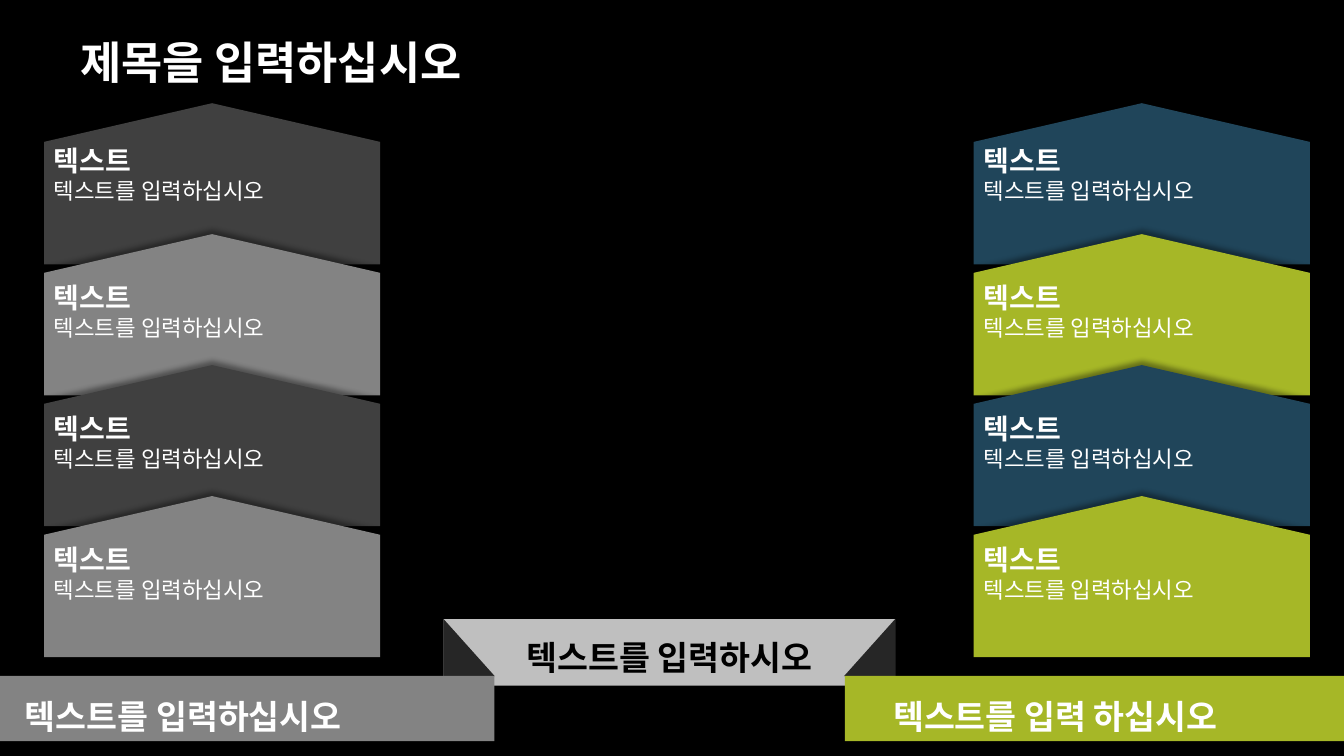
from lxml import etree
from pptx import Presentation
from pptx.dml.color import RGBColor
from pptx.enum.shapes import MSO_SHAPE
from pptx.enum.text import MSO_ANCHOR, MSO_AUTO_SIZE, PP_ALIGN
from pptx.oxml.ns import qn
from pptx.util import Cm, Pt

RECTANGLE = MSO_SHAPE.RECTANGLE
TRIANGLE = MSO_SHAPE.ISOSCELES_TRIANGLE
PENTAGON = MSO_SHAPE.PENTAGON
LEFT, CENTER = PP_ALIGN.LEFT, PP_ALIGN.CENTER
MIDDLE = MSO_ANCHOR.MIDDLE
GROW = MSO_AUTO_SIZE.SHAPE_TO_FIT_TEXT

FONT = "Calibri"
BLACK, WHITE, DARK = "000000", "FFFFFF", "262626"
CHARCOAL, GRAY, SILVER = "404040", "838383", "BFBFBF"
NAVY, LIME = "20455A", "A6B727"
STEP_PITCH, STEP_HEIGHT = 3.3, 4.06


def color(hex_string):
    """Turn a hex string into a colour."""
    return RGBColor.from_string(hex_string)


def add_block(slide, kind, box, fill):
    """Add a flat filled shape without an outline."""
    block = slide.shapes.add_shape(kind, *map(Cm, box))
    block.shadow.inherit = False
    block.fill.solid()
    block.fill.fore_color.rgb = color(fill)
    block.line.fill.background()
    return block


def add_text(slide, box, lines, ink=WHITE, spacing=None, align=LEFT, wrap=True):
    """Add a text box with one paragraph per (wording, size, bold) line."""
    frame = slide.shapes.add_textbox(*map(Cm, box)).text_frame
    frame.word_wrap = wrap
    frame.auto_size = GROW
    for index, (wording, size, bold) in enumerate(lines):
        paragraph = frame.add_paragraph() if index else frame.paragraphs[0]
        paragraph.alignment = align
        paragraph.line_spacing = spacing
        run = paragraph.add_run()
        run.text = wording
        run.font.name = FONT
        run.font.size = Pt(size)
        run.font.bold = bold
        run.font.color.rgb = color(ink)
    return frame


def cast_shadow_up(block):
    """Give a shape a soft black shadow above it."""
    effects = block._element.spPr.find(qn("a:effectLst"))
    shadow = etree.SubElement(
        effects, qn("a:outerShdw"), blurRad=str(Pt(4)), dist=str(Pt(3)),
        dir="16200000", algn="b", rotWithShape="0")
    ink = etree.SubElement(shadow, qn("a:srgbClr"), val=BLACK)
    etree.SubElement(ink, qn("a:alpha"), val="40000")


def add_step(slide, left, top, width, text_offset, fill):
    """Add one upward arrow step with its heading and detail."""
    turn = (width - STEP_HEIGHT) / 2
    arrow = add_block(
        slide, PENTAGON, (left + turn, top - turn, STEP_HEIGHT, width), fill)
    arrow.rotation = 270
    arrow.adjustments[0] = 0.24
    cast_shadow_up(arrow)
    add_text(slide, (left, top + text_offset, width, 1.8),
             [("텍스트", 20, True), ("텍스트를 입력하십시오", 16, False)])


def add_step_column(slide, left, top, width, fills):
    """Stack overlapping steps from top to bottom."""
    for index, fill in enumerate(fills):
        text_offset = 1.04 if index else 0.89
        add_step(slide, left, top + index * STEP_PITCH, width, text_offset, fill)


def add_center_ribbon(slide, left, top, width):
    """Add the raised middle ribbon."""
    add_block(slide, RECTANGLE, (left, top, width, 1.68), SILVER)
    add_text(slide, (left + 1.49, top - 0.18, 8.41, 1.8),
             [("텍스트를 입력하시오", 24, True)], BLACK, 1.5, CENTER, False)


def add_ribbon_folds(slide, left, top, width):
    """Add the dark folds at both ends of the ribbon."""
    fold_width, fold_height = 1.29, 1.44
    for fold_left, apex in ((left + width - fold_width, 1), (left, 0)):
        fold = add_block(
            slide, TRIANGLE, (fold_left, top, fold_width, fold_height), DARK)
        fold.adjustments[0] = apex


def add_side_banner(slide, left, top, width, fill, caption, indent, caption_width):
    """Add a bottom banner with its caption."""
    add_block(slide, RECTANGLE, (left, top, width, 1.65), fill)
    add_text(slide, (left + indent, top - 0.13, caption_width, 1.8),
             [(caption, 24, True)], spacing=1.5, wrap=False)


def add_title(slide, left, top, width, height):
    """Add the slide title."""
    frame = add_text(slide, (left, top, width, height),
                     [("제목을 입력하십시오", 32, True)], spacing=0.9)
    frame.auto_size = MSO_AUTO_SIZE.NONE
    frame.vertical_anchor = MIDDLE


def main():
    """Build and save the slide."""
    deck = Presentation()
    deck.slide_width, deck.slide_height = Cm(33.87), Cm(19.05)
    slide = deck.slides.add_slide(deck.slide_layouts[6])
    slide.background.fill.solid()
    slide.background.fill.fore_color.rgb = color(BLACK)

    ribbon = (11.18, 15.6, 11.38)
    add_center_ribbon(slide, *ribbon)
    add_step_column(slide, 24.54, 2.6, 8.47, (NAVY, LIME) * 2)
    add_ribbon_folds(slide, *ribbon)
    add_step_column(slide, 1.11, 2.6, 8.47, (CHARCOAL, GRAY) * 2)
    add_side_banner(slide, 0, 17.03, 12.46, GRAY,
                    "텍스트를 입력하십시오", 0.38, 9.25)
    add_side_banner(slide, 21.29, 17.03, 12.58, LIME,
                    "텍스트를 입력 하십시오", 0.97, 9.45)
    add_title(slide, 1.78, 0.5, 30.23, 2.29)
    deck.save("out.pptx")


if __name__ == "__main__":
    main()
